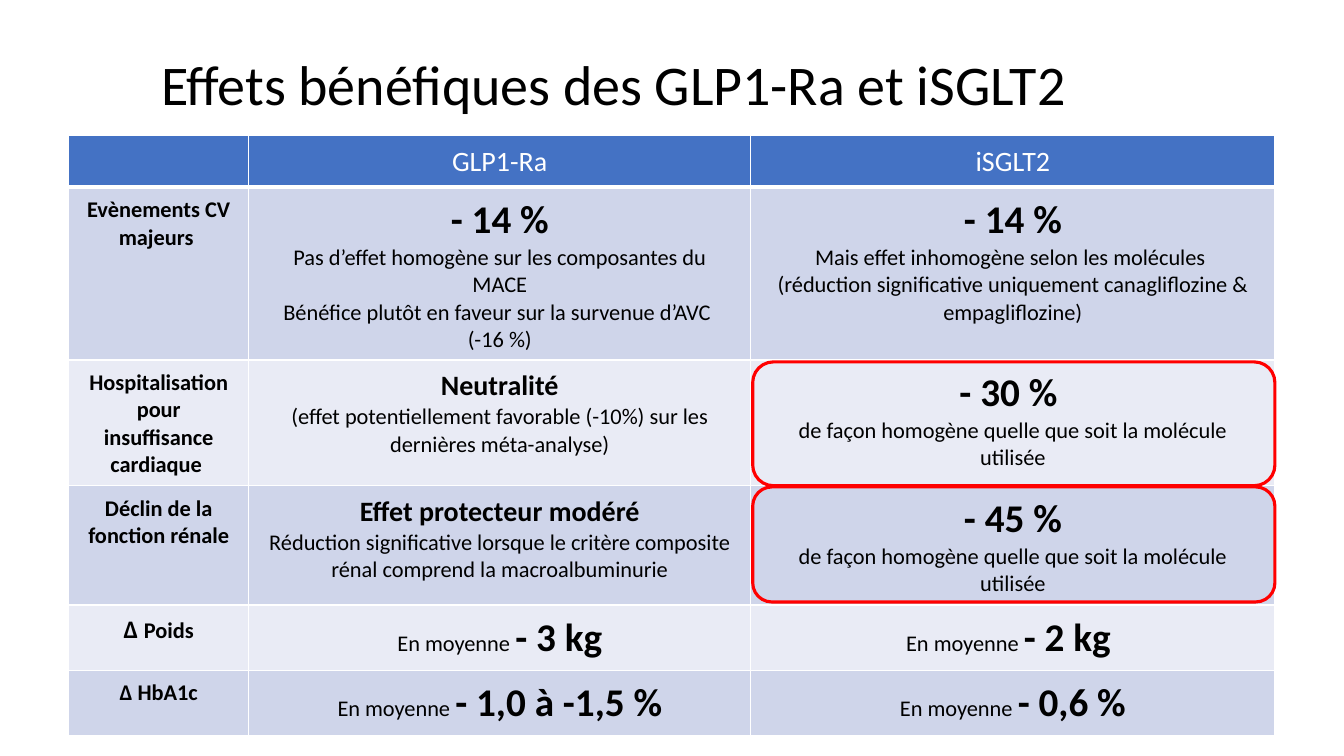
from lxml import etree
from pptx import Presentation
from pptx.dml.color import RGBColor
from pptx.enum.shapes import MSO_SHAPE
from pptx.enum.text import MSO_ANCHOR, PP_ALIGN
from pptx.oxml.ns import qn
from pptx.util import Cm, Pt

FONT = "Calibri"
COLORS = {
    "text": "000000",
    "white": "FFFFFF",
    "header": "4472C4",
    "dark_band": "CFD5EA",
    "light_band": "E9EBF5",
    "highlight": "FF0000",
}

TITLE = "Effets bénéfiques des GLP1-Ra et iSGLT2"
HEADERS = ["", "GLP1-Ra", "iSGLT2"]

# Each cell is a list of paragraphs, each paragraph a list of (text, size, bold).
HOMOGENEOUS = [("de façon homogène quelle que soit la molécule utilisée", 16, False)]
AVERAGE = ("En moyenne ", 16, False)
BODY = [
    [
        [[("Evènements CV majeurs ", 16, True)]],
        [
            [("- 14 %", 28, True)],
            [("Pas d’effet homogène sur les composantes du MACE", 16, False)],
            [("Bénéfice plutôt en faveur sur la survenue d’AVC ", 16, False)],
            [("(-16 %)", 16, False)],
        ],
        [
            [("- 14 %", 28, True)],
            [("Mais effet inhomogène selon les molécules ", 16, False)],
            [("(réduction significative uniquement canagliflozine & empagliflozine)", 16, False)],
        ],
    ],
    [
        [[("Hospitalisation pour insuffisance cardiaque ", 16, True)]],
        [
            [("Neutralité", 20, True)],
            [("(effet potentiellement favorable (-10%) sur les dernières méta-analyse)", 16, False)],
        ],
        [[("- 30 % ", 28, True)], HOMOGENEOUS],
    ],
    [
        [[("Déclin de la fonction rénale", 16, True)]],
        [
            [("Effet protecteur modéré", 20, True)],
            [("Réduction significative lorsque le critère composite rénal "
              "comprend la macroalbuminurie", 16, False)],
        ],
        [[("- 45 %", 28, True)], HOMOGENEOUS],
    ],
    [
        [[("Δ ", 18, True), ("Poids", 16, True)]],
        [[AVERAGE, ("- 3 kg", 28, True)]],
        [[AVERAGE, ("- 2 kg ", 28, True)]],
    ],
    [
        [[("Δ HbA1c", 16, True)]],
        [[AVERAGE, ("- 1,0 à -1,5 %", 28, True)]],
        [[AVERAGE, ("- 0,6 %", 28, True)]],
    ],
]

# Lengths in centimetres
TABLE_LEFT, TABLE_TOP, TABLE_HEIGHT = 1.73, 3.41, 15.16
COL_WIDTHS = [4.54, 12.65, 13.21]
ROW_HEIGHTS = [1.3, 2.06, 1.65, 1.83, 1.02, 1.02]
FRAME_LEFT, FRAME_WIDTH = 18.97, 13.16
FRAMES = [(9.12, 3.12), (12.27, 2.9)]  # top, height
HEADER_BORDERS = {"a:lnL": 1, "a:lnR": 1, "a:lnT": 1, "a:lnB": 3}


def rgb(name):
    return RGBColor.from_string(COLORS[name])


def write_run(p, text, size, bold, color):
    r = p.add_run()
    r.text = text
    r.font.name = FONT
    r.font.size = Pt(size)
    r.font.bold = bold
    r.font.color.rgb = rgb(color)


def fill_cell(cell, paragraphs, fill, color):
    cell.margin_left = cell.margin_right = Cm(0.46)
    cell.margin_top = cell.margin_bottom = Cm(0.23)
    cell.fill.solid()
    cell.fill.fore_color.rgb = rgb(fill)
    tf = cell.text_frame
    for i, runs in enumerate(paragraphs):
        p = tf.add_paragraph() if i else tf.paragraphs[0]
        p.alignment = PP_ALIGN.CENTER
        for run in runs:
            write_run(p, *run, color)


def add_header_borders(cell):
    tc_pr = cell._tc.get_or_add_tcPr()
    for tag, width in HEADER_BORDERS.items():
        ln = etree.SubElement(tc_pr, qn(tag), w=str(Pt(width)))
        solid = etree.SubElement(ln, qn("a:solidFill"))
        etree.SubElement(solid, qn("a:srgbClr"), val=COLORS["white"])


def add_title(slide):
    tf = slide.shapes.add_textbox(Cm(3.81), Cm(0.97), Cm(27.89), Cm(2.44)).text_frame
    tf.word_wrap = True
    tf.vertical_anchor = MSO_ANCHOR.MIDDLE
    p = tf.paragraphs[0]
    p.line_spacing = 0.9
    write_run(p, TITLE, 40, False, "text")


def add_effects_table(slide):
    frame = slide.shapes.add_table(
        len(ROW_HEIGHTS), len(COL_WIDTHS), Cm(TABLE_LEFT), Cm(TABLE_TOP),
        Cm(sum(COL_WIDTHS)), Cm(TABLE_HEIGHT))
    table = frame.table
    for column, width in zip(table.columns, COL_WIDTHS):
        column.width = Cm(width)
    for row, height in zip(table.rows, ROW_HEIGHTS):
        row.height = Cm(height)
    frame.height = Cm(TABLE_HEIGHT)

    for cell, label in zip(table.rows[0].cells, HEADERS):
        add_header_borders(cell)
        fill_cell(cell, [[(label, 20, False)]] if label else [], "header", "white")
    for i, contents in enumerate(BODY):
        band = "light_band" if i % 2 else "dark_band"
        for cell, paragraphs in zip(table.rows[i + 1].cells, contents):
            fill_cell(cell, paragraphs, band, "text")


def add_highlights(slide):
    for top, height in FRAMES:
        sp = slide.shapes.add_shape(
            MSO_SHAPE.ROUNDED_RECTANGLE, Cm(FRAME_LEFT), Cm(top), Cm(FRAME_WIDTH), Cm(height))
        sp.shadow.inherit = False
        sp.fill.background()
        sp.line.color.rgb = rgb("highlight")
        sp.line.width = Pt(2.25)


def main():
    prs = Presentation()
    prs.slide_width, prs.slide_height = Cm(33.87), Cm(19.05)
    slide = prs.slides.add_slide(prs.slide_layouts[6])
    add_title(slide)
    add_effects_table(slide)
    add_highlights(slide)
    prs.save("out.pptx")


if __name__ == "__main__":
    main()
